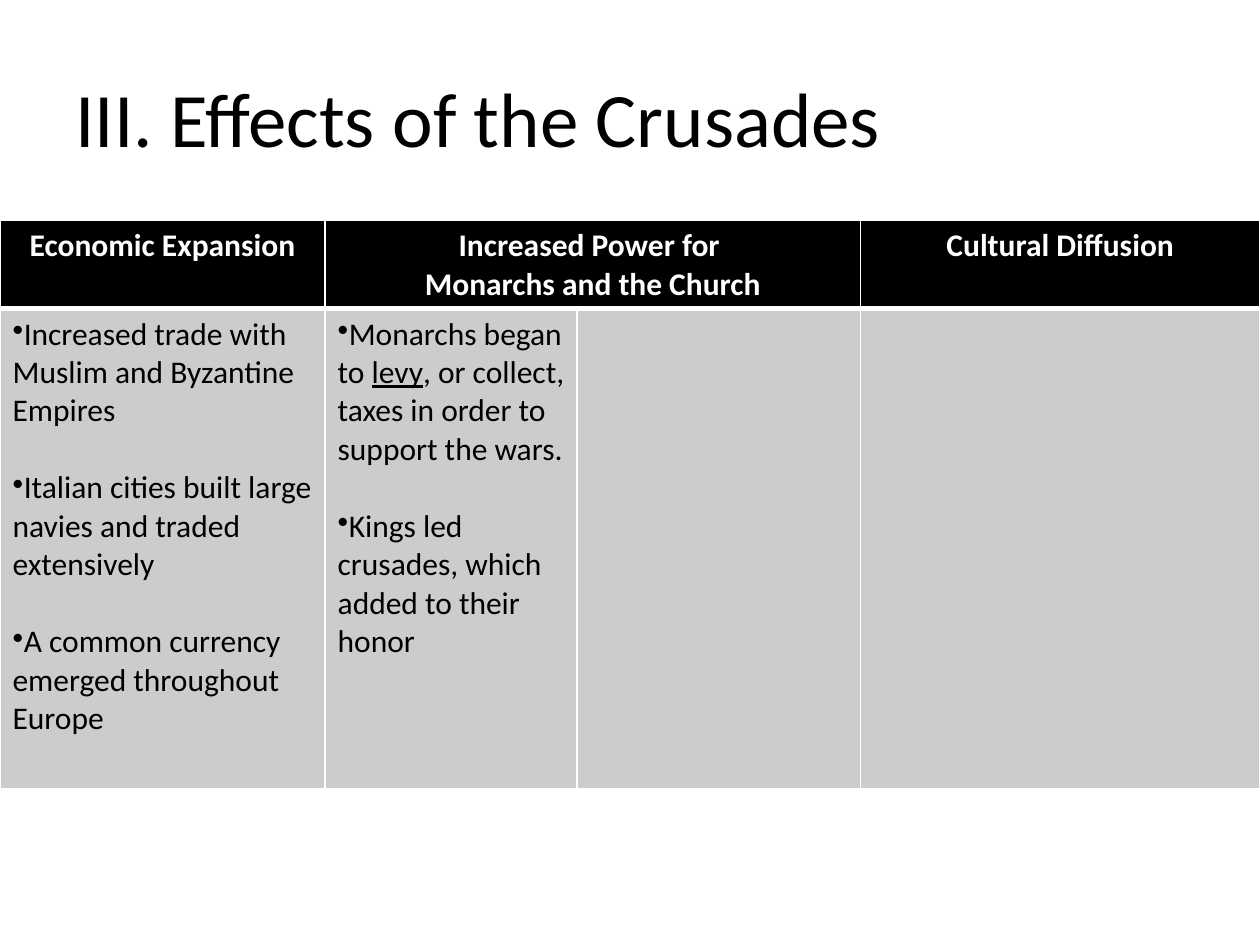
from dataclasses import dataclass

from lxml import etree
from pptx import Presentation
from pptx.dml.color import RGBColor
from pptx.enum.text import MSO_ANCHOR, PP_ALIGN
from pptx.oxml.ns import qn
from pptx.util import Inches, Pt

CENTER = PP_ALIGN.CENTER
MIDDLE = MSO_ANCHOR.MIDDLE


@dataclass(frozen=True)
class Theme:
    font: str = "Calibri"
    ink: str = "000000"
    paper: str = "FFFFFF"
    body_fill: str = "CCCCCC"
    title_size: int = 44
    text_size: int = 18
    bullet_gap: int = 22
    thin_rule: int = 1
    header_rule: int = 3


class SlideBuilder:
    """Draws styled titles and tables on one slide."""

    def __init__(self, slide, theme):
        self.slide = slide
        self.theme = theme

    def style(self, paragraph, size, color, bold=False):
        for run in paragraph.runs:
            run.font.name = self.theme.font
            run.font.size = Pt(size)
            run.font.bold = bold
            run.font.color.rgb = RGBColor.from_string(color)

    def title(self, text, left, top, width, height):
        box = self.slide.shapes.add_textbox(
            Inches(left), Inches(top), Inches(width), Inches(height))
        frame = box.text_frame
        frame.word_wrap = True
        frame.vertical_anchor = MIDDLE
        frame.text = text
        self.style(frame.paragraphs[0], self.theme.title_size, self.theme.ink)

    def table(self, left, top, widths, heights):
        table = self.slide.shapes.add_table(
            len(heights), len(widths), Inches(left), Inches(top),
            Inches(sum(widths)), Inches(sum(heights))).table
        for column, width in zip(table.columns, widths):
            column.width = Inches(width)
        for row, height in zip(table.rows, heights):
            row.height = Inches(height)
        return table

    def paint(self, cell, fill, top_rule, bottom_rule):
        thin = self.theme.thin_rule
        properties = cell._tc.get_or_add_tcPr()
        for side, weight in zip("LRTB", (thin, thin, top_rule, bottom_rule)):
            line = etree.SubElement(properties, qn(f"a:ln{side}"), w=str(Pt(weight)))
            solid = etree.SubElement(line, qn("a:solidFill"))
            etree.SubElement(solid, qn("a:srgbClr"), val=self.theme.paper)
        cell.fill.solid()
        cell.fill.fore_color.rgb = RGBColor.from_string(fill)

    def header(self, cell, text):
        cell.text_frame.text = text
        for paragraph in cell.text_frame.paragraphs:
            paragraph.alignment = CENTER
            self.style(paragraph, self.theme.text_size, self.theme.paper, bold=True)

    def bullets(self, cell, points, key_term):
        cell.text_frame.text = "\n".join(points)
        for index, paragraph in enumerate(cell.text_frame.paragraphs):
            etree.SubElement(paragraph._p.get_or_add_pPr(), qn("a:buChar"), char="•")
            if index:
                paragraph.space_before = Pt(self.theme.bullet_gap)
            before, term, after = paragraph.text.partition(key_term)
            if term:
                paragraph.runs[0].text = before
                term_run = paragraph.add_run()
                term_run.text = term
                term_run.font.underline = True
                paragraph.add_run().text = after
            self.style(paragraph, self.theme.text_size, self.theme.ink)


def main():
    deck = Presentation()
    deck.slide_width, deck.slide_height = Inches(10), Inches(7.5)
    theme = Theme()
    builder = SlideBuilder(deck.slides.add_slide(deck.slide_layouts[6]), theme)
    builder.title("III. Effects of the Crusades", 0.5, 0.3, 9, 1.25)

    effects = builder.table(0, 1.75, [2.58, 2, 2.25, 3.17], [0.7, 3.81])
    for column in range(len(effects.columns)):
        builder.paint(effects.cell(0, column), theme.ink,
                      theme.thin_rule, theme.header_rule)
        builder.paint(effects.cell(1, column), theme.body_fill,
                      theme.header_rule, theme.thin_rule)
    effects.cell(0, 1).merge(effects.cell(0, 2))

    headings = {
        0: "Economic Expansion",
        1: "Increased Power for \nMonarchs and the Church",
        3: "Cultural Diffusion",
    }
    for column, heading in headings.items():
        builder.header(effects.cell(0, column), heading)

    details = [
        ["Increased trade with Muslim and Byzantine Empires",
         "Italian cities built large navies and traded extensively",
         "A common currency emerged throughout Europe"],
        ["Monarchs began to levy, or collect, taxes in order to support the wars.",
         "Kings led crusades, which added to their honor"],
    ]
    for column, points in enumerate(details):
        builder.bullets(effects.cell(1, column), points, key_term="levy")

    deck.save("out.pptx")


if __name__ == "__main__":
    main()
